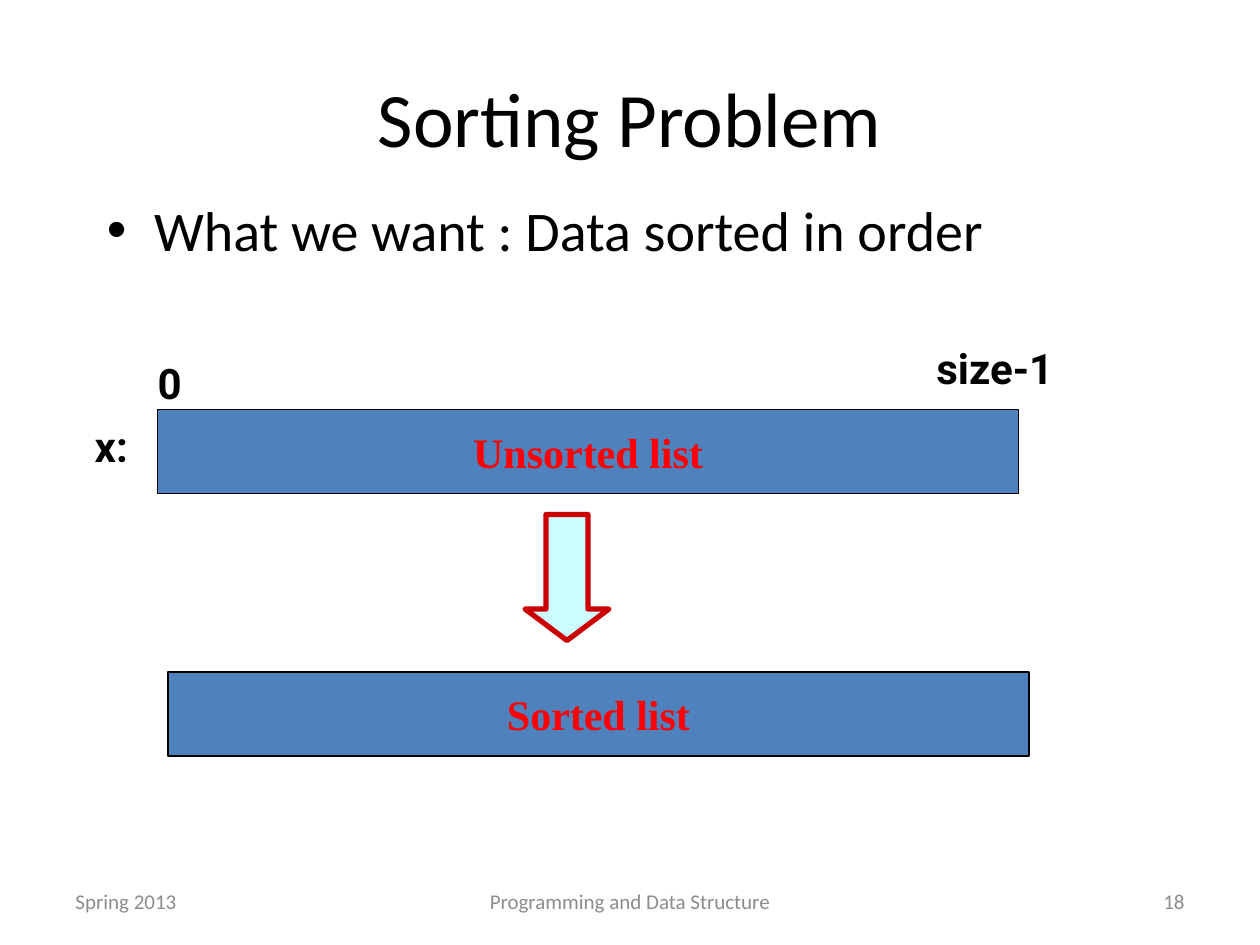
import pptx
import pptx.util
import pptx.dml.color
import pptx.enum.shapes
import pptx.enum.text
import pptx.oxml.ns
from dataclasses import dataclass
from lxml import etree

Pt = pptx.util.Pt
Align = pptx.enum.text.PP_ALIGN
Anchor = pptx.enum.text.MSO_ANCHOR
Kind = pptx.enum.shapes.MSO_SHAPE


@dataclass(frozen=True)
class Theme:
    black: str = "000000"
    grey: str = "8C8C8C"
    bar: str = "4F81BD"
    red: str = "FF0000"
    mint: str = "CCFFFF"
    edge: str = "CC0000"
    sans: str = "Calibri"
    mark: str = "Roboto"
    serif: str = "Times New Roman"
    title: int = 44
    body: int = 32
    label: int = 24
    foot: int = 12


THEME = Theme()


def rgb(code):
    return pptx.dml.color.RGBColor.from_string(code)


def write(shape, text, font, size, color, bold=False, align=Align.LEFT,
          anchor=Anchor.TOP, wrap=True):
    frame = shape.text_frame
    frame.text = text
    frame.word_wrap = wrap
    frame.vertical_anchor = anchor
    para = frame.paragraphs[0]
    para.alignment = align
    face = para.runs[0].font
    face.name, face.size, face.bold = font, Pt(size), bold
    face.color.rgb = rgb(color)
    return para


def add_text(slide, box, text, font, size, color, **style):
    shape = slide.shapes.add_textbox(*map(Pt, box))
    return write(shape, text, font, size, color, **style)


def add_form(slide, kind, box, fill, line, width):
    shape = slide.shapes.add_shape(kind, *map(Pt, box))
    shape.shadow.inherit = False
    shape.fill.solid()
    shape.fill.fore_color.rgb = rgb(fill)
    shape.line.color.rgb = rgb(line)
    shape.line.width = Pt(width)
    return shape


def add_bar(slide, left, top, text):
    bar = add_form(slide, Kind.RECTANGLE, (left, top, 492, 48),
                   THEME.bar, THEME.black, 0.75)
    write(bar, text, THEME.serif, THEME.label, THEME.red, bold=True,
          align=Align.CENTER, anchor=Anchor.MIDDLE, wrap=False)


def add_mark(slide, left, top, width, text, wrap=False):
    """Add a bold label beside a list bar."""
    add_text(slide, (left, top, width, 36), text, THEME.mark, THEME.label,
             THEME.black, bold=True, wrap=wrap)


def add_bullet(para, indent):
    props = para._p.get_or_add_pPr()
    props.set("marL", str(Pt(indent)))
    props.set("indent", str(-Pt(indent)))
    qn = pptx.oxml.ns.qn
    etree.SubElement(props, qn("a:buFont")).set("typeface", "Arial")
    etree.SubElement(props, qn("a:buChar")).set("char", "•")


def add_foot(slide, left, width, text, align):
    add_text(slide, (left, 500.5, width, 28.75), text, THEME.sans, THEME.foot,
             THEME.grey, align=align, anchor=Anchor.MIDDLE)


def main():
    deck = pptx.Presentation()
    deck.slide_width, deck.slide_height = Pt(720), Pt(540)
    slide = deck.slides.add_slide(deck.slide_layouts[6])

    add_text(slide, (36, 21.6, 648, 90), "Sorting Problem", THEME.sans,
             THEME.title, THEME.black, align=Align.CENTER, anchor=Anchor.MIDDLE)
    goal = add_text(slide, (54, 108, 612, 79), "What we want : Data sorted in order",
                    THEME.sans, THEME.body, THEME.black)
    goal.space_before = Pt(6.4)
    add_bullet(goal, 27)

    add_bar(slide, 90, 234, "Unsorted list")
    add_mark(slide, 47, 237, 37, "x:")
    add_mark(slide, 83, 201, 29, "0")
    add_mark(slide, 528, 192, 102, "size-1", wrap=True)
    add_bar(slide, 96, 384, "Sorted list")
    arrow = add_form(slide, Kind.DOWN_ARROW, (300, 294, 48, 72),
                     THEME.mint, THEME.edge, 3)
    arrow.adjustments[0] = 0.5
    arrow.adjustments[1] = 0.375

    add_foot(slide, 36, 168, "Spring 2013", Align.LEFT)
    add_foot(slide, 246, 228, "Programming and Data Structure", Align.CENTER)
    add_foot(slide, 516, 168, "18", Align.RIGHT)
    deck.save("out.pptx")


if __name__ == "__main__":
    main()
